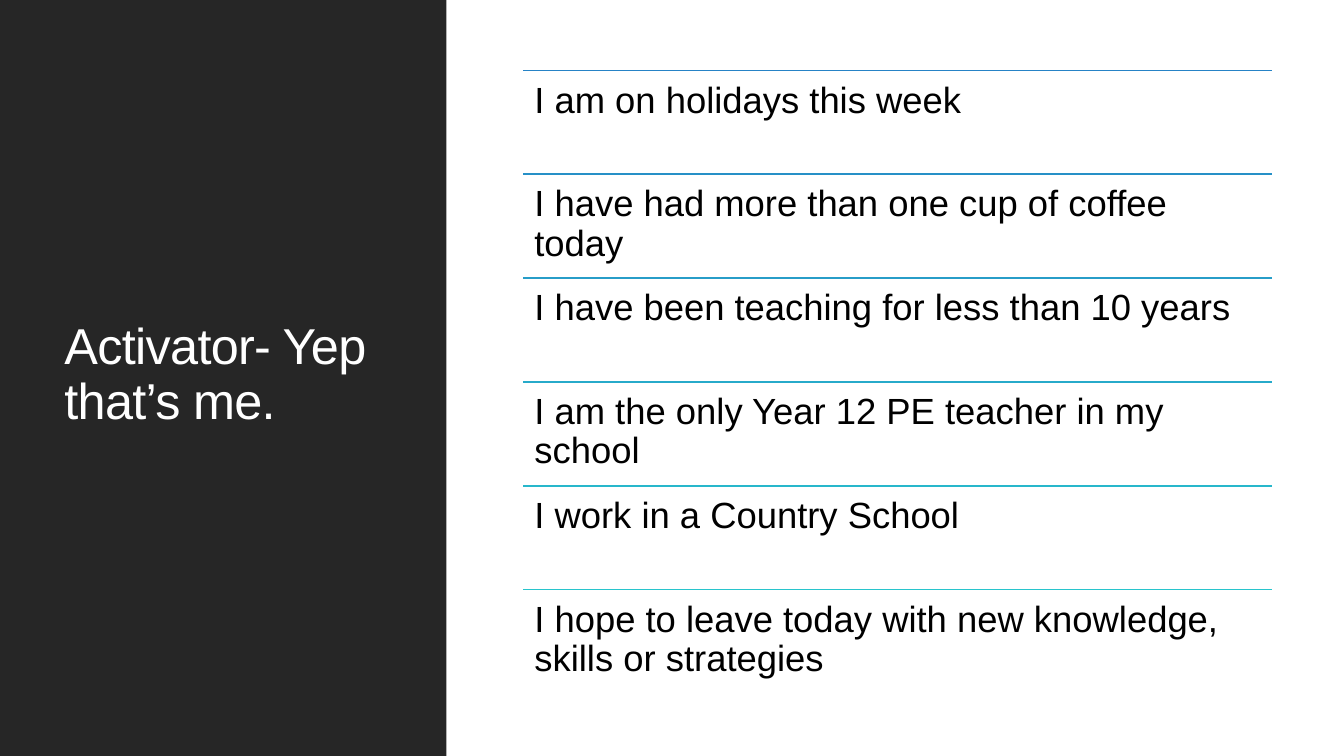
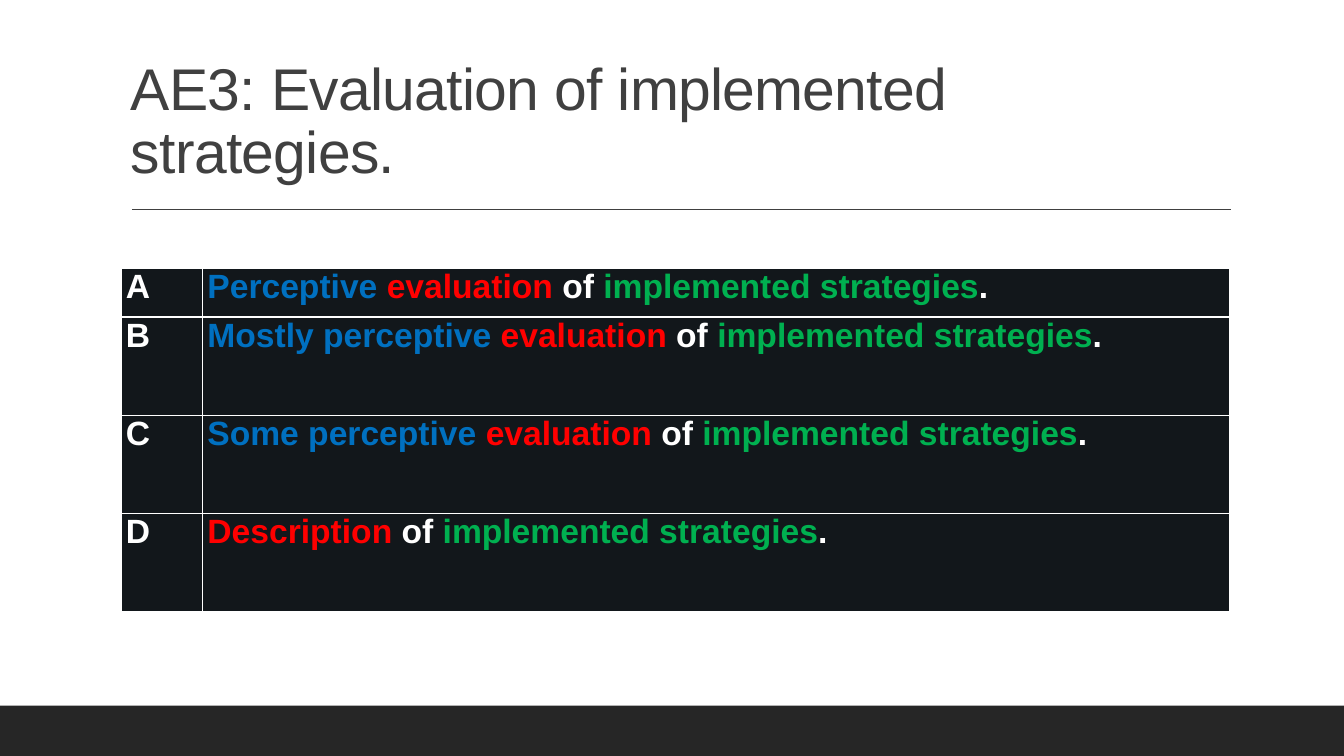
"""Build two slides: a statement list beside a dark panel, and a graded criteria table."""
import dataclasses

import pptx
import pptx.dml.color
import pptx.enum.shapes
import pptx.enum.text
import pptx.oxml.ns
import pptx.util
from lxml import etree

Anchor = pptx.enum.text.MSO_ANCHOR
COLUMNS, ROWS = 32, 18
WIDTH, HEIGHT = pptx.util.Inches(13.33), pptx.util.Inches(7.5)


@dataclasses.dataclass(frozen=True)
class Theme:
    """Colours, font and type sizes shared by the slides."""
    font: str = "Arial"
    dark: str = "262626"
    heading: str = "404040"
    white: str = "FFFFFF"
    black: str = "000000"
    cell: str = "12171B"
    quality: str = "0070C0"
    verb: str = "FF0000"
    subject: str = "00B050"
    first_rule: str = "2683C6"
    last_rule: str = "28C4CC"
    panel_title_size: int = 36
    page_title_size: int = 42
    list_size: int = 26
    table_size: int = 24
    title_tracking: int = -50
    line_spacing: float = 0.9


THEME = Theme()


@dataclasses.dataclass(frozen=True)
class Box:
    """A rectangle measured in grid columns and rows."""
    left: float
    top: float
    width: float
    height: float

    def inner(self, left, top, width, height):
        """Return a box placed relative to this one."""
        return Box(self.left + left, self.top + top, width, height)

    def emu(self):
        """Return left, top, width and height as slide lengths."""
        column, row = WIDTH / COLUMNS, HEIGHT / ROWS
        return (round(self.left * column), round(self.top * row),
                round(self.width * column), round(self.height * row))


SLIDE = Box(0, 0, COLUMNS, ROWS)

STATEMENTS = [
    "I am on holidays this week",
    "I have had more than one cup of coffee today",
    "I have been teaching for less than 10 years",
    "I am the only Year 12 PE teacher in my school",
    "I work in a Country School",
    "I hope to leave today with new knowledge, skills or strategies",
]

GRADES = [
    ("A", "Perceptive ", "evaluation"),
    ("B", "Mostly perceptive ", "evaluation"),
    ("C", "Some perceptive ", "evaluation"),
    ("D", "", "Description"),
]


def rgb(value):
    """Turn a hex string into a colour."""
    return pptx.dml.color.RGBColor.from_string(value)


def blend(start, end, share):
    """Mix two hex colours by the given share."""
    pairs = zip(rgb(start), rgb(end))
    return "".join(f"{round(a + (b - a) * share):02X}" for a, b in pairs)


def add_span(para, text, size, color, bold=False):
    """Add one styled run to a paragraph."""
    span = para.add_run()
    span.text = text
    span.font.name = THEME.font
    span.font.size = pptx.util.Pt(size)
    span.font.bold = bold
    span.font.color.rgb = rgb(color)
    return span


def add_text(page, box, text, size, color, anchor=Anchor.TOP):
    """Add a wrapped text box and return its frame and run."""
    frame = page.shapes.add_textbox(*box.emu()).text_frame
    frame.word_wrap = True
    frame.vertical_anchor = anchor
    para = frame.paragraphs[0]
    para.line_spacing = THEME.line_spacing
    return frame, add_span(para, text, size, color)


def add_title(page, box, text, size, color, anchor):
    """Add a title with tightened letter spacing."""
    _, span = add_text(page, box, text, size, color, anchor)
    span.font._element.set("spc", str(THEME.title_tracking))


def add_band(page, box):
    """Add a plain dark rectangle."""
    band = page.shapes.add_shape(pptx.enum.shapes.MSO_SHAPE.RECTANGLE, *box.emu())
    band.shadow.inherit = False
    band.fill.solid()
    band.fill.fore_color.rgb = rgb(THEME.dark)
    band.line.fill.background()


def add_rule(page, box, color, weight):
    """Draw a horizontal line along the top of a box."""
    left, top, width, _ = box.emu()
    rule = page.shapes.add_connector(
        pptx.enum.shapes.MSO_CONNECTOR.STRAIGHT, left, top, left + width, top)
    rule.line.color.rgb = rgb(color)
    rule.line.width = pptx.util.Pt(weight)
    etree.SubElement(rule._element.spPr, pptx.oxml.ns.qn("a:effectLst"))


def add_side_panel(page, box, title):
    """Fill a dark panel and centre its title vertically."""
    add_band(page, box)
    add_title(page, box.inner(1.3, 1.37, 8.09, 15.14), title,
              THEME.panel_title_size, THEME.white, Anchor.MIDDLE)


def add_statements(page, box, statements):
    """Stack statements in equal rows, each under a rule of shifting colour."""
    height = box.height / len(statements)
    for index, statement in enumerate(statements):
        row = box.inner(0, index * height, box.width, height)
        share = index / (len(statements) - 1)
        add_rule(page, row, blend(THEME.first_rule, THEME.last_rule, share), 1.25)
        frame, _ = add_text(page, row, statement, THEME.list_size, THEME.black)
        frame.margin_left = frame.margin_right = pptx.util.Inches(0.11)
        frame.margin_top = frame.margin_bottom = pptx.util.Inches(0.11)


def add_heading(page, box, title):
    """Place a page title above its rule."""
    add_title(page, box.inner(0, 0, box.width, 3.82), title,
              THEME.page_title_size, THEME.heading, Anchor.BOTTOM)
    add_rule(page, box.inner(0.26, box.height, box.width - 0.24, 0), THEME.heading, 1)


def style_cell(cell):
    """Set the borders, fill and margins of a table cell."""
    properties = cell._tc.get_or_add_tcPr()
    for side in ("lnL", "lnR", "lnT", "lnB"):
        border = etree.SubElement(properties, pptx.oxml.ns.qn(f"a:{side}"),
                                  w=str(pptx.util.Pt(1)))
        fill = etree.SubElement(border, pptx.oxml.ns.qn("a:solidFill"))
        etree.SubElement(fill, pptx.oxml.ns.qn("a:srgbClr"), val=THEME.white)
    cell.fill.solid()
    cell.fill.fore_color.rgb = rgb(THEME.cell)
    cell.margin_left = cell.margin_right = cell.margin_bottom = pptx.util.Inches(0.05)
    cell.margin_top = 0


def add_grades(page, box, grades):
    """Build the grade table: a half-height first row and a narrow letter column."""
    table = page.shapes.add_table(len(grades), 2, *box.emu()).table
    table.first_row = table.horz_banding = False
    _, _, width, height = box.emu()
    letter_width = box.inner(0, 0, 1.94, 0).emu()[2]
    table.columns[0].width = letter_width
    table.columns[1].width = width - letter_width
    unit = height / (2 * len(grades) - 1)
    for index, (letter, quality, verb) in enumerate(grades):
        table.rows[index].height = round(unit * (2 if index else 1))
        criterion = [(quality, THEME.quality), (verb, THEME.verb), (" of ", THEME.white),
                     ("implemented strategies", THEME.subject), (".", THEME.white)]
        for column, parts in enumerate(([(letter, THEME.white)], criterion)):
            cell = table.cell(index, column)
            style_cell(cell)
            for text, color in parts:
                if text:
                    add_span(cell.text_frame.paragraphs[0], text,
                             THEME.table_size, color, bold=True)


def build_activator(page, box):
    """Lay out the side panel and the statement list."""
    add_side_panel(page, box.inner(0, 0, 10.63, box.height), "Activator- Yep that’s me.")
    add_statements(page, box.inner(12.46, 1.68, 17.83, 14.83), STATEMENTS)


def build_evaluation(page, box):
    """Lay out the heading, footer band and grade table."""
    add_heading(page, box.inner(2.88, 0.74, 26.4, 4.25),
                "AE3: Evaluation of implemented strategies.")
    add_band(page, box.inner(0, 16.8, box.width, 1.2))
    add_grades(page, box.inner(2.88, 6.38, 26.4, 8.18), GRADES)


def main():
    """Create the deck and save it."""
    deck = pptx.Presentation()
    deck.slide_width, deck.slide_height = WIDTH, HEIGHT
    for build in (build_activator, build_evaluation):
        build(deck.slides.add_slide(deck.slide_layouts[6]), SLIDE)
    deck.save("out.pptx")


if __name__ == "__main__":
    main()
